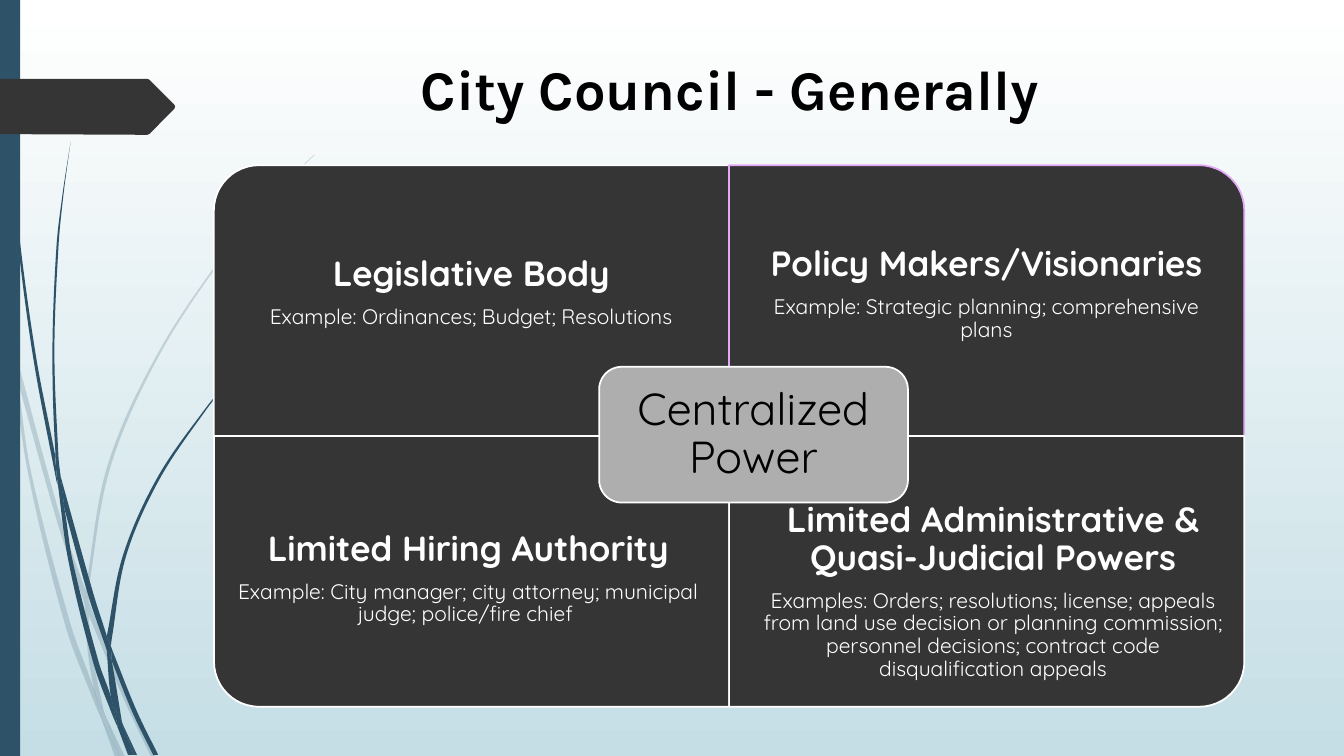
from dataclasses import dataclass
from math import dist

from lxml.etree import SubElement
from pptx import Presentation
from pptx.dml.color import RGBColor
from pptx.enum.shapes import MSO_SHAPE
from pptx.enum.text import MSO_ANCHOR, MSO_AUTO_SIZE, PP_ALIGN
from pptx.oxml.ns import qn
from pptx.shapes.base import BaseShape
from pptx.slide import Slide
from pptx.text.text import TextFrame
from pptx.util import Pt

Point = tuple[float, float]
Edge = list[Point]


@dataclass(frozen=True)
class Theme:
    blue: str = "2E5369"
    dark: str = "353535"
    grey: str = "AEAEAE"
    violet: str = "E3A9F6"
    white: str = "FFFFFF"
    black: str = "000000"
    sky: str = "C5DEE5"
    title_font: str = "Karla"
    body_font: str = "Quicksand"
    title_size: float = 40
    centre_size: float = 32
    heading_size: float = 25
    example_size: float = 15
    outline: float = 1.25


@dataclass(frozen=True)
class Frame:
    left: float
    top: float
    width: float
    height: float

    def lengths(self) -> tuple[Pt, Pt, Pt, Pt]:
        return Pt(self.left), Pt(self.top), Pt(self.width), Pt(self.height)


@dataclass(frozen=True)
class Line:
    text: str
    size: float
    color: str
    bold: bool = False


@dataclass(frozen=True)
class Quadrant:
    column: int
    row: int
    rotation: int
    outline: str
    text_left: float
    text_top: float
    text_drop: float
    heading: str
    example: str


@dataclass(frozen=True)
class Wisp:
    """A curved sliver: two smooth edges in hundredths of an inch, out and back."""
    out: Edge
    back: Edge


THEME = Theme()
WISP_UNIT = 0.72
PANEL = Frame(152.8, 118, 368, 193.4)
TEXT_HEIGHT = 145.4

QUADRANTS = [
    Quadrant(0, 0, 270, THEME.white, 152.6, 117.4, 38, "Legislative Body",
             "Example: Ordinances; Budget; Resolutions"),
    Quadrant(1, 0, 0, THEME.violet, 520.6, 118.4, 38, "Policy Makers/Visionaries",
             "Example: Strategic planning; comprehensive plans"),
    Quadrant(0, 1, 180, THEME.white, 150.5, 340.6, 0, "Limited Hiring Authority",
             "Example: City manager; city attorney; municipal judge; police/fire chief "),
    Quadrant(1, 1, 90, THEME.white, 525.4, 349.9, 0,
             "Limited Administrative & Quasi-Judicial Powers",
             "Examples: Orders; resolutions; license; appeals from land use decision or "
             "planning commission; personnel decisions; contract code disqualification appeals"),
]

FAINT_WISPS = [
    Wisp([(11, 350), (9, 322), (0, 282)], [(0, 299), (10, 344), (11, 350)]),
    Wisp([(17, 376), (58, 522), (84, 599)], [(85, 586), (62, 520), (14, 345)]),
    Wisp([(88, 610), (123, 694), (150, 751)], [(155, 751), (127, 692), (92, 607), (88, 596)]),
    Wisp([(105, 711), (119, 751)], [(124, 751), (105, 711)]),
    Wisp([(11, 350), (28, 470), (65, 621), (92, 693), (101, 714)],
         [(99, 707), (93, 683), (70, 619), (31, 469), (17, 376), (11, 350)]),
    Wisp([(84, 599), (87, 646), (93, 683), (96, 692), (105, 711)],
         [(103, 706), (91, 646), (88, 610), (88, 608), (84, 599)]),
    Wisp([(88, 596), (88, 584), (110, 462), (160, 349), (229, 245), (268, 198), (290, 175),
          (312, 154)],
         [(312, 153), (289, 175), (268, 197), (228, 244), (158, 348), (107, 461), (85, 584),
          (85, 586)]),
    Wisp([(101, 714), (114, 751)], [(119, 751), (101, 714)]),
    Wisp([(84, 599), (88, 608), (88, 610)], [(88, 596), (85, 586)]),
    Wisp([(93, 683), (99, 707), (101, 714), (119, 751)],
         [(119, 751), (105, 711), (96, 692), (93, 683)]),
]
BOLD_WISPS = [
    Wisp([(3, 0), (4, 48), (7, 110), (17, 233), (33, 355), (56, 477), (57, 481)],
         [(55, 457), (55, 453), (36, 355), (19, 232), (8, 109), (5, 48), (4, 0)]),
    Wisp([(64, 505), (88, 592), (106, 645)], [(106, 633), (106, 631), (93, 590), (60, 472)]),
    Wisp([(111, 656), (132, 708), (152, 749)], [(157, 749), (136, 706), (113, 649), (110, 641)]),
    Wisp([(57, 477), (68, 557), (93, 659), (111, 708), (117, 722)],
         [(116, 717), (110, 691), (98, 657), (72, 556), (64, 505), (57, 477)]),
    Wisp([(60, 472), (58, 453), (54, 349), (58, 245), (63, 193), (70, 141)],
         [(70, 141), (62, 193), (56, 245), (52, 349), (55, 449), (60, 472)]),
    Wisp([(122, 719), (133, 749)], [(136, 749), (122, 719)]),
    Wisp([(55, 449), (55, 453), (57, 477), (64, 505)], [(64, 505), (60, 472), (55, 449)]),
    Wisp([(110, 641), (111, 633), (125, 552), (158, 476), (205, 406), (231, 374), (245, 359),
          (261, 344)],
         [(260, 344), (245, 358), (231, 373), (204, 405), (156, 474), (122, 551), (106, 631)]),
    Wisp([(117, 722), (127, 749)], [(131, 749), (117, 722)]),
    Wisp([(106, 645), (110, 691), (116, 706), (122, 719)],
         [(121, 716), (111, 656), (109, 651), (106, 645)]),
    Wisp([(106, 631), (106, 645), (109, 651), (111, 656)], [(110, 641), (106, 631)]),
    Wisp([(110, 691), (116, 717), (117, 722), (130, 749)],
         [(133, 749), (122, 719), (116, 706), (110, 691)]),
]
PENNANT = [(0, 56.3), (105.2, 56.3), (106.8, 57), (124.6, 74.9), (125.1, 76.2),
           (124.6, 77.7), (106.8, 95.6), (105.2, 96.3), (0, 95.8)]


def paint(shape: BaseShape, fill: str, outline: str | None = None) -> None:
    shape.shadow.inherit = False
    shape.fill.solid()
    shape.fill.fore_color.rgb = RGBColor.from_string(fill)
    if outline:
        shape.line.color.rgb = RGBColor.from_string(outline)
        shape.line.width = Pt(THEME.outline)
    else:
        shape.line.fill.background()


def handle(point: Point, before: Point, after: Point, reach: float) -> Point:
    """Step from a point along the direction between its neighbours."""
    span = dist(before, after)
    return tuple(p + reach * (b - a) / span for p, a, b in zip(point, before, after))


def bend_edge(corners: list) -> None:
    """Turn the straight segments between these outline points into smooth curves."""
    edge = [(int(corner.get("x")), int(corner.get("y"))) for corner in corners]
    padded = [edge[0], *edge, edge[-1]]
    for corner, a, b, c, d in zip(corners[1:], padded, padded[1:], padded[2:], padded[3:]):
        segment = corner.getparent()
        segment.remove(corner)
        curve = SubElement(segment.getparent(), qn("a:cubicBezTo"))
        segment.getparent().replace(segment, curve)
        reach = dist(b, c) / 3
        for x, y in (handle(b, a, c, reach), handle(c, b, d, -reach), c):
            SubElement(curve, qn("a:pt"), x=str(round(x)), y=str(round(y)))


def add_outline(shapes, points: Edge, unit: float = 1) -> BaseShape:
    corners = [(Pt(x * unit), Pt(y * unit)) for x, y in points]
    builder = shapes.build_freeform(*corners[0])
    builder.add_line_segments(corners[1:], close=True)
    return builder.convert_to_shape()


def add_wisps(slide: Slide, wisps: list[Wisp], opacity: int = 100) -> None:
    group = slide.shapes.add_group_shape()
    for wisp in wisps:
        sliver = add_outline(group.shapes, wisp.out + wisp.back, WISP_UNIT)
        corners = list(sliver.element.spPr.iter(qn("a:pt")))
        turn = len(wisp.out)
        bend_edge(corners[:turn])
        bend_edge(corners[turn:])
        paint(sliver, THEME.blue)
        if opacity < 100:
            color = sliver.element.spPr.find(qn("a:solidFill")).find(qn("a:srgbClr"))
            SubElement(color, qn("a:alpha"), val=str(opacity * 1000))


def write_lines(frame: TextFrame, lines: list[Line], font: str) -> None:
    frame.word_wrap = True
    frame.auto_size = MSO_AUTO_SIZE.NONE
    frame.text = "\n".join(line.text for line in lines)
    for para, line in zip(frame.paragraphs, lines):
        para.alignment = PP_ALIGN.CENTER
        for span in para.runs:
            span.font.name = font
            span.font.size = Pt(line.size)
            span.font.bold = line.bold
            span.font.color.rgb = RGBColor.from_string(line.color)


def add_label(slide: Slide, area: Frame, lines: list[Line], inset: float, drop: float = 0) -> None:
    """Add middle-anchored text; drop widens the top inset."""
    frame = slide.shapes.add_textbox(*area.lengths()).text_frame
    frame.margin_left = frame.margin_right = frame.margin_bottom = Pt(inset)
    frame.margin_top = Pt(inset + drop)
    frame.vertical_anchor = MSO_ANCHOR.MIDDLE
    write_lines(frame, lines, THEME.body_font)
    for para, line in zip(frame.paragraphs, lines):
        para.line_spacing = 0.9
        para.space_after = Pt(0.35 * line.size)


def add_quadrant(slide: Slide, quadrant: Quadrant) -> None:
    width, height = PANEL.width, PANEL.height
    middle_x = PANEL.left + width * (quadrant.column + 0.5)
    middle_y = PANEL.top + height * (quadrant.row + 0.5)
    if quadrant.rotation % 180:
        width, height = height, width
    area = Frame(middle_x - width / 2, middle_y - height / 2, width, height)
    panel = slide.shapes.add_shape(MSO_SHAPE.ROUND_1_RECTANGLE, *area.lengths())
    panel.rotation = quadrant.rotation
    paint(panel, THEME.dark, quadrant.outline)
    lines = [Line(quadrant.heading, THEME.heading_size, THEME.white, True),
             Line(quadrant.example, THEME.example_size, THEME.white)]
    text_area = Frame(quadrant.text_left, quadrant.text_top, PANEL.width, TEXT_HEIGHT)
    add_label(slide, text_area, lines, 13.7, quadrant.text_drop)


def add_backdrop(slide: Slide) -> None:
    fill = slide.background.fill
    fill.gradient()
    fill.gradient_angle = 270
    for stop, color, position in zip(fill.gradient_stops, (THEME.white, THEME.sky), (0, 1)):
        stop.color.rgb = RGBColor.from_string(color)
        stop.position = position
    add_wisps(slide, FAINT_WISPS, opacity=20)
    add_wisps(slide, BOLD_WISPS)
    side_bar = slide.shapes.add_shape(MSO_SHAPE.RECTANGLE, *Frame(0, 0, 14.4, 540).lengths())
    paint(side_bar, THEME.blue)
    paint(add_outline(slide.shapes, PENNANT), THEME.dark)


def add_title(slide: Slide) -> None:
    title = slide.shapes.title
    title.left, title.top, title.width, title.height = Frame(170.4, 35.3, 702, 73.4).lengths()
    title.text_frame.vertical_anchor = MSO_ANCHOR.TOP
    heading = Line("City Council - Generally", THEME.title_size, THEME.black, True)
    write_lines(title.text_frame, [heading], THEME.title_font)


def main() -> None:
    deck = Presentation()
    deck.slide_width, deck.slide_height = Pt(960), Pt(540)
    page = deck.slides.add_slide(deck.slide_layouts.get_by_name("Title Only"))
    add_backdrop(page)
    add_title(page)
    for quadrant in QUADRANTS:
        add_quadrant(page, quadrant)
    hub = page.shapes.add_shape(MSO_SHAPE.ROUNDED_RECTANGLE, *Frame(428, 262, 220.6, 97).lengths())
    paint(hub, THEME.grey, THEME.white)
    add_label(page, Frame(432.7, 267, 211, 87),
              [Line("Centralized Power", THEME.centre_size, THEME.black)], 9.4)
    deck.save("out.pptx")


if __name__ == "__main__":
    main()
